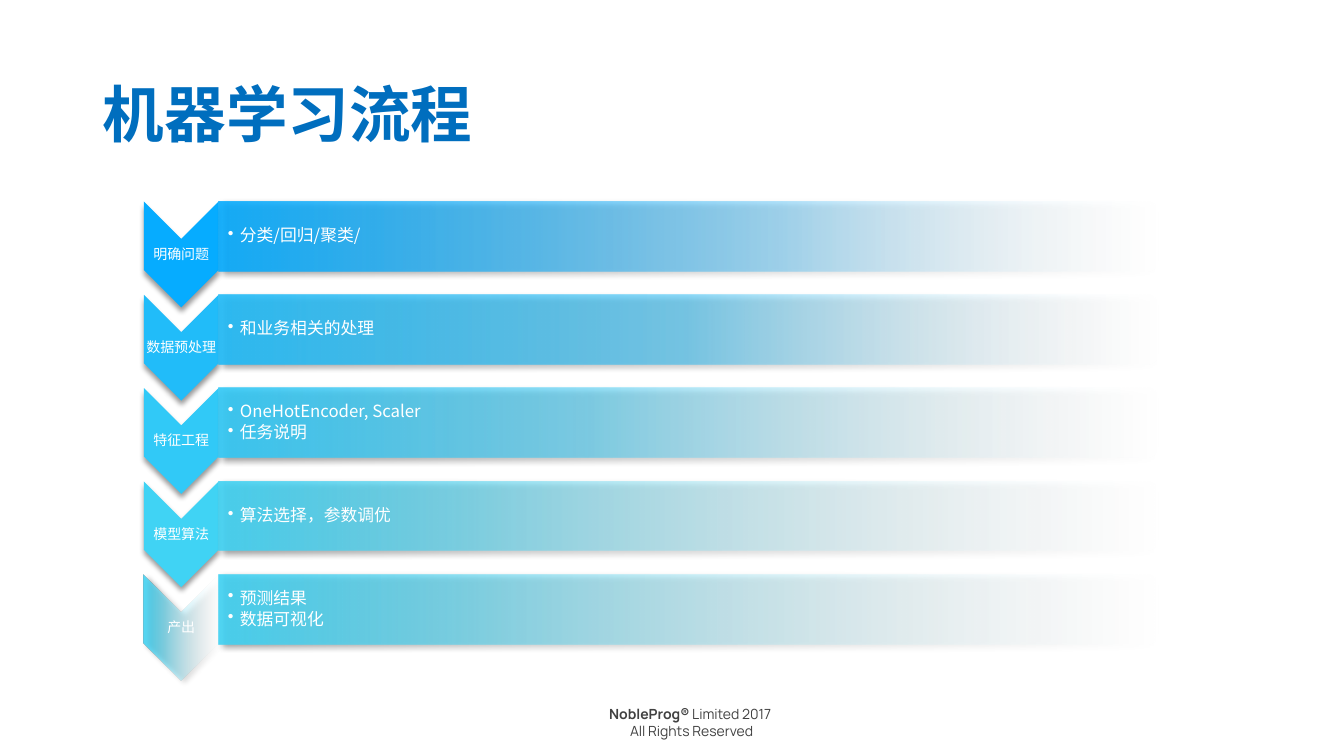
from pptx import Presentation
from pptx.dml.color import RGBColor
from pptx.enum.shapes import MSO_SHAPE
from pptx.enum.text import MSO_ANCHOR, MSO_AUTO_SIZE, PP_ALIGN
from pptx.oxml import parse_xml
from pptx.oxml.ns import nsdecls
from pptx.util import Inches, Pt

WIDE, HIGH = Inches(13.33), Inches(7.5)
BLUE, GREY, WHITE = "006EBE", "414141", "FFFFFF"
HEAD, BODY = "Manrope", "Noto Sans CJK SC"
TOP, PITCH = 26.65, 12.34  # percent of the slide's height
LEFT, STEM = 10.7, 5.57  # percent of the slide's width
FADE = ("40D3F4", 70, 50)

# label, bullet lines, bar fade (colour, middle stop, its opacity), arrow colour
STEPS = [
    ("明确问题", ["分类/回归/聚类/"], ("06ACFF", 40, 30), "06ACFF"),
    ("数据预处理", ["和业务相关的处理"], ("21BCF9", 50, 50), "21BCF9"),
    ("特征工程", ["OneHotEncoder, Scaler", "任务说明"], ("31C9F7", 60, 50), "31C9F7"),
    ("模型算法", ["算法选择，参数调优"], FADE, "40D3F4"),
    ("产出", ["预测结果", "数据可视化"], FADE, None),
]


def color(code):
    return RGBColor.from_string(code)


def area(x, y, w, h):
    """Turn percent shares of the slide into lengths."""
    return [int(part * size / 100)
            for part, size in zip((x, y, w, h), (WIDE, HIGH, WIDE, HIGH))]


def style(run, size, code, font, bold=None):
    face = run.font
    face.size, face.bold = Pt(size), bold
    face.color.rgb = color(code)
    face.name = font
    run._r.get_or_add_rPr().append(
        parse_xml(f'<a:ea {nsdecls("a")} typeface="{font}"/>'))


def dress(shape, fade, angle):
    """Fill with a fade of (colour, middle, opacity), and cast a shadow."""
    code, mid, alpha = fade
    stops = "".join(
        f'<a:gs pos="{pos * 1000}"><a:srgbClr val="{tone}">'
        f'<a:alpha val="{solid * 1000}"/></a:srgbClr></a:gs>'
        for pos, tone, solid in ((0, WHITE, 0), (mid, code, alpha), (100, code, 90)))
    shape._element.spPr[1].addnext(parse_xml(
        f'<a:gradFill {nsdecls("a")} rotWithShape="1"><a:gsLst>{stops}</a:gsLst>'
        '<a:lin ang="5400000" scaled="0"/></a:gradFill>'))
    shade(shape, angle)


def shade(shape, angle):
    shape.line.fill.background()
    shape._element.spPr.append(parse_xml(
        f'<a:effectLst {nsdecls("a")}><a:outerShdw blurRad="{Pt(4)}" '
        f'dist="{Pt(3)}" dir="{angle * 60000}" rotWithShape="0">'
        '<a:srgbClr val="000000"><a:alpha val="40000"/></a:srgbClr>'
        '</a:outerShdw></a:effectLst>'))


def turn(slide, kind, box):
    """Add a shape turned by 90 degrees that covers the box."""
    x, y, w, h = area(*box)
    shape = slide.shapes.add_shape(
        kind, x + (w - h) // 2, y + (h - w) // 2, h, w)
    shape.rotation = 90
    return shape


def write(slide, box, lines, wrap=True, pad=None, anchor=MSO_ANCHOR.TOP):
    frame = slide.shapes.add_textbox(*area(*box)).text_frame
    frame.word_wrap, frame.vertical_anchor = wrap, anchor
    if pad is not None:
        frame.margin_left = Inches(pad)
        frame.margin_right = frame.margin_top = frame.margin_bottom = Inches(0.01)
    frame.text = "\n".join(lines)
    return frame.paragraphs


def bullet(para):
    props = para._p.get_or_add_pPr()
    props.set("marL", str(Inches(0.12)))
    props.set("indent", str(-Inches(0.12)))
    props.append(parse_xml(f'<a:buChar {nsdecls("a")} char="•"/>'))


def arrow(slide, top, label, code):
    shape = turn(slide, MSO_SHAPE.CHEVRON, (LEFT, top, STEM, 14))
    if code:
        shape.fill.solid()
        shape.fill.fore_color.rgb = color(code)
        shade(shape, 90)
    else:
        dress(shape, FADE, 45)
    para = write(slide, (LEFT, top + 4.9, STEM, 4.27), [label],
                 pad=0.01, anchor=MSO_ANCHOR.MIDDLE)[0]
    para.alignment, para.line_spacing = PP_ALIGN.CENTER, 0.9
    style(para.runs[0], 10, WHITE, BODY)


def bar(slide, top, lines, fade):
    shape = turn(slide, MSO_SHAPE.ROUND_2_SAME_RECTANGLE,
                 (LEFT + STEM, top, 69.9, 9.2))
    dress(shape, fade, 45)
    for para in write(slide, (LEFT + STEM, top + 0.45, 69.6, 8.27), lines,
                      pad=0.09, anchor=MSO_ANCHOR.MIDDLE):
        para.line_spacing, para.space_after = 0.9, Pt(1.8)
        bullet(para)
        style(para.runs[0], 12, WHITE, BODY)


def title(slide, text):
    shape = slide.shapes.title
    shape.left, shape.top, shape.width, shape.height = area(6.9, 5.33, 86.25, 19.33)
    frame = shape.text_frame
    frame.text = text
    frame.auto_size = MSO_AUTO_SIZE.NONE
    frame.vertical_anchor = MSO_ANCHOR.MIDDLE
    frame.paragraphs[0].alignment = PP_ALIGN.LEFT
    style(frame.paragraphs[0].runs[0], 44, BLUE, HEAD, True)


def footer(slide):
    first, last = write(slide, (44.18, 92.67, 14.55, 8.27),
                        ["NobleProg®", "All Rights Reserved"], wrap=False)
    first.add_run().text = " Limited 2017 "
    for para in (first, last):
        para.alignment = PP_ALIGN.CENTER
        for run in para.runs:
            style(run, 10, GREY, HEAD, run.text == "NobleProg®")


def main():
    deck = Presentation()
    deck.slide_width, deck.slide_height = WIDE, HIGH
    slide = deck.slides.add_slide(deck.slide_layouts[5])
    footer(slide)
    title(slide, "机器学习流程")
    for row, (label, lines, fade, code) in enumerate(STEPS):
        top = TOP + row * PITCH
        arrow(slide, top, label, code)
        bar(slide, top, lines, fade)
    deck.save("out.pptx")


if __name__ == "__main__":
    main()
